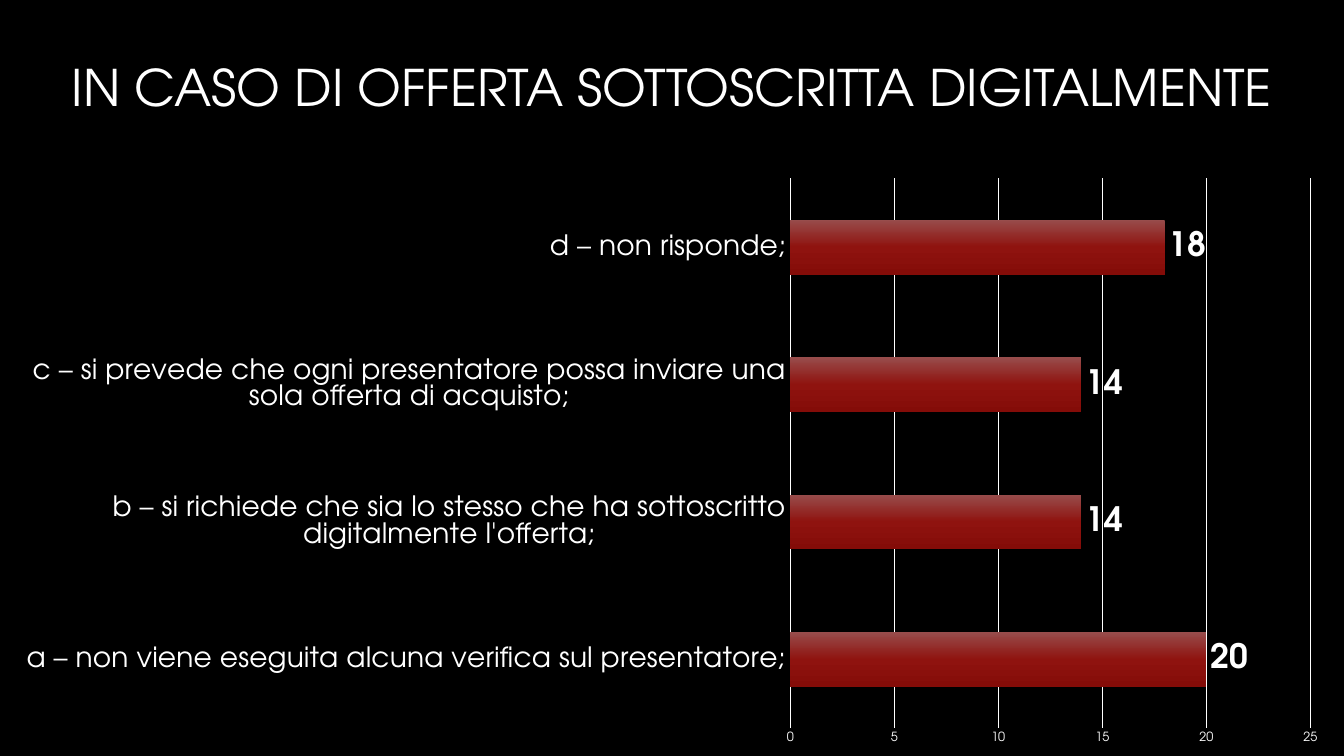
from lxml.etree import SubElement
from pptx import Presentation
from pptx.chart.data import CategoryChartData
from pptx.dml.color import RGBColor
from pptx.enum.chart import XL_CHART_TYPE, XL_LABEL_POSITION, XL_TICK_MARK
from pptx.enum.text import MSO_ANCHOR, PP_ALIGN
from pptx.oxml.ns import qn
from pptx.util import Cm, Pt

BLACK = RGBColor(0x00, 0x00, 0x00)
WHITE = RGBColor(0xFF, 0xFF, 0xFF)
BAR_STOPS = {
    0: RGBColor(0x98, 0x4D, 0x4C),
    50: RGBColor(0x8F, 0x13, 0x0F),
    100: RGBColor(0x84, 0x0C, 0x08),
}
TYPEFACE = "TeX Gyre Adventor"
SLIDE_WIDTH, SLIDE_HEIGHT = 33.87, 19.05
TITLE_BOX = (0, 0.36, SLIDE_WIDTH, 3.84)
ANSWERS_BOX = (0, 4.2, SLIDE_WIDTH, SLIDE_HEIGHT - 4.2)

# Bar area as shares of the chart box
BAR_AREA = {"x": 0.588, "y": 0.02, "w": 0.387, "h": 0.933}

TITLE = "IN CASO DI OFFERTA SOTTOSCRITTA DIGITALMENTE"
ANSWERS = {
    "a – non viene eseguita alcuna verifica sul presentatore;": 20,
    "b – si richiede che sia lo stesso che ha sottoscritto "
    "digitalmente l'offerta;": 14,
    "c – si prevede che ogni presentatore possa inviare una "
    "sola offerta di acquisto;": 14,
    "d – non risponde;": 18,
}

FONTS = {
    "title": {"name": TYPEFACE, "size": Pt(36), "bold": False},
    "chart": {"name": TYPEFACE, "size": Pt(10), "bold": False},
    "answers": {"name": TYPEFACE, "size": Pt(20), "bold": False},
    "scale": {"name": TYPEFACE, "size": Pt(9), "bold": False},
    "counts": {"name": TYPEFACE, "size": Pt(24), "bold": True},
}


def apply_format(target, values):
    for attribute, value in values.items():
        setattr(target, attribute, value)


def style_font(font, role):
    apply_format(font, FONTS[role])
    font.color.rgb = WHITE


def style_line(line, width):
    line.width = Pt(width)
    line.color.rgb = WHITE


def add_title(slide, box):
    frame = slide.shapes.add_textbox(*map(Cm, box)).text_frame
    apply_format(frame, {"word_wrap": True, "vertical_anchor": MSO_ANCHOR.MIDDLE})
    heading = frame.paragraphs[0]
    apply_format(heading, {"text": TITLE, "alignment": PP_ALIGN.CENTER,
                           "line_spacing": 0.9})
    style_font(heading.runs[0].font, "title")


def place_bar_area(chart):
    plot_area = chart._chartSpace.find(".//" + qn("c:plotArea"))
    for old_layout in plot_area.findall(qn("c:layout")):
        plot_area.remove(old_layout)
    layout = SubElement(plot_area, qn("c:layout"))
    plot_area.insert(0, layout)
    manual = SubElement(layout, qn("c:manualLayout"))
    settings = {"layoutTarget": "inner", "xMode": "edge", "yMode": "edge", **BAR_AREA}
    for tag, value in settings.items():
        SubElement(manual, qn(f"c:{tag}")).set("val", str(value))


def shade_bars(series):
    fill = series.format.fill
    fill.gradient()
    fill.gradient_angle = 270
    stops = series._element.find(".//" + qn("a:gsLst"))
    for stop in list(stops):
        stops.remove(stop)
    for percent, color in BAR_STOPS.items():
        stop = SubElement(stops, qn("a:gs"), pos=str(percent * 1000))
        SubElement(stop, qn("a:srgbClr"), val=str(color))


def add_answers_chart(slide, box):
    data = CategoryChartData(number_format="0")
    data.categories = list(ANSWERS)
    data.add_series("Series 1", list(ANSWERS.values()))
    chart = slide.shapes.add_chart(
        XL_CHART_TYPE.BAR_CLUSTERED, *map(Cm, box), data).chart
    apply_format(chart, {"has_legend": False, "has_title": False})
    style_font(chart.font, "chart")
    place_bar_area(chart)

    # Bars and their counts
    bars = chart.plots[0]
    apply_format(bars, {"gap_width": 150, "vary_by_categories": False,
                        "has_data_labels": True})
    shade_bars(bars.series[0])
    counts = bars.data_labels
    apply_format(counts, {"show_value": True, "number_format": "0",
                          "number_format_is_linked": False,
                          "position": XL_LABEL_POSITION.OUTSIDE_END})
    style_font(counts.font, "counts")

    # Axes
    answers, scale = chart.category_axis, chart.value_axis
    for axis, role in ((answers, "answers"), (scale, "scale")):
        apply_format(axis, {"major_tick_mark": XL_TICK_MARK.NONE,
                            "minor_tick_mark": XL_TICK_MARK.NONE})
        style_font(axis.tick_labels.font, role)
    style_line(answers.format.line, 1)
    apply_format(scale, {"minimum_scale": 0, "maximum_scale": 25, "major_unit": 5,
                         "has_major_gridlines": True})
    apply_format(scale.tick_labels, {"number_format": "0",
                                     "number_format_is_linked": False})
    style_line(scale.major_gridlines.format.line, 0.75)
    scale.format.line.fill.background()


def main():
    deck = Presentation()
    apply_format(deck, {"slide_width": Cm(SLIDE_WIDTH),
                        "slide_height": Cm(SLIDE_HEIGHT)})
    slide = deck.slides.add_slide(deck.slide_layouts[6])
    backdrop = slide.background.fill
    backdrop.solid()
    backdrop.fore_color.rgb = BLACK
    add_title(slide, TITLE_BOX)
    add_answers_chart(slide, ANSWERS_BOX)
    deck.save("out.pptx")


if __name__ == "__main__":
    main()
